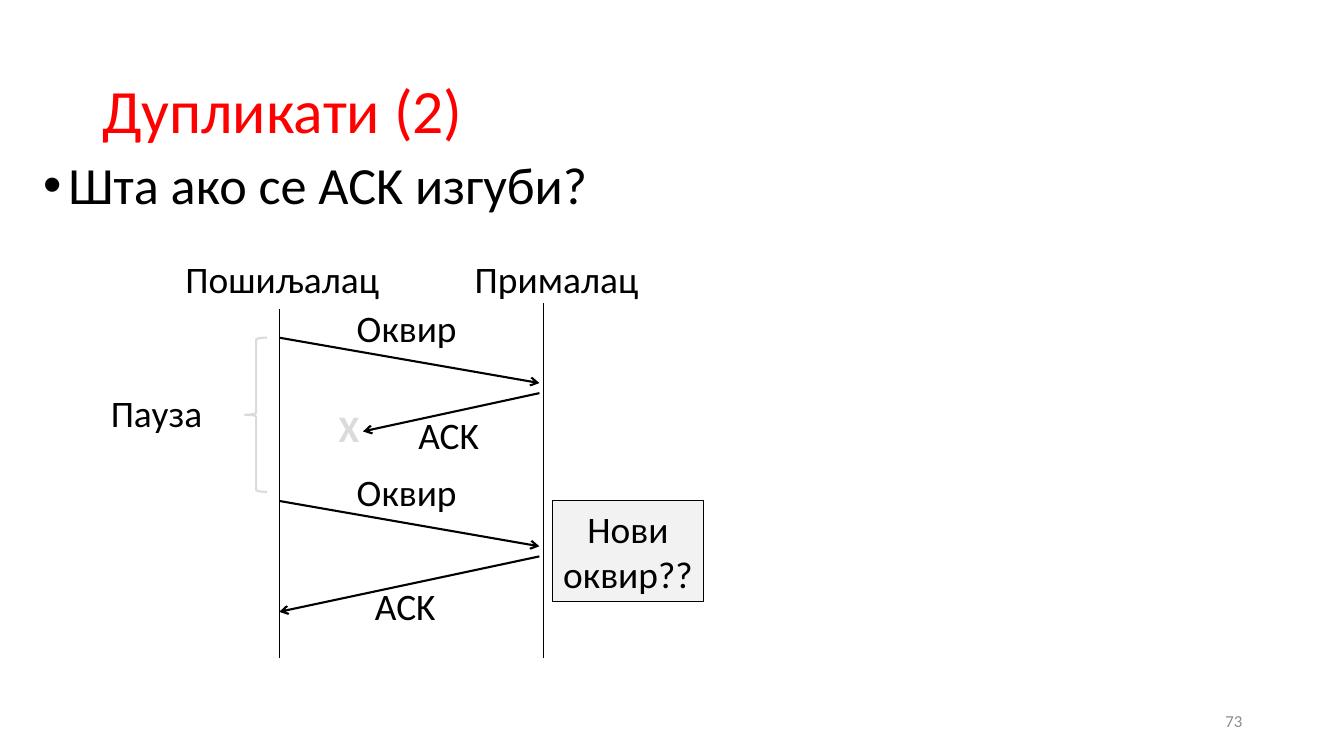
from pptx import Presentation
from pptx.dml.color import RGBColor
from pptx.enum.shapes import MSO_CONNECTOR as Connector, MSO_SHAPE as Preset
from pptx.enum.text import MSO_ANCHOR as Anchor, PP_ALIGN as Align
from pptx.oxml import parse_xml
from pptx.oxml.ns import nsdecls
from pptx.util import Pt

PX = 9144
BLACK, RED, PALE, GREY, LIGHT = "000000", "FF0000", "DBDBDB", "8C8C8C", "F2F2F2"
FONT = "Calibri"
LABEL_SIZE = 26.7


def px(*lengths):
    """Turn whole px into EMU."""
    return [length * PX for length in lengths]


def color(value):
    """Turn a hex string into a colour."""
    return RGBColor.from_string(value)


def write(shape, text, size, ink=BLACK, bold=False, align=Align.LEFT, anchor=Anchor.TOP, wrap=False):
    """Fill a shape with one styled paragraph and return the paragraph."""
    frame = shape.text_frame
    frame.text = text
    frame.word_wrap = wrap
    frame.vertical_anchor = anchor
    paragraph = frame.paragraphs[0]
    paragraph.alignment = align
    for run in paragraph.runs:
        run.font.name = FONT
        run.font.size = Pt(size)
        run.font.bold = bold
        run.font.color.rgb = color(ink)
    return paragraph


def add_text(slide, box, text, size, **style):
    """Add a text box and return its paragraph."""
    return write(slide.shapes.add_textbox(*px(*box)), text, size, **style)


def add_label(slide, left, top, width, text, **style):
    """Add a one-line diagram label."""
    add_text(slide, (left, top, width, 55), text, LABEL_SIZE, **style)


def add_line(slide, start, end, width, arrow=False):
    """Draw a black line, optionally with an open arrowhead at its end."""
    line = slide.shapes.add_connector(Connector.STRAIGHT, *px(*start, *end))
    line.line.color.rgb = color(BLACK)
    line.line.width = Pt(width)
    properties = line._element.spPr
    properties.append(parse_xml(f"<a:effectLst {nsdecls('a')}/>"))
    if arrow:
        line.line._get_or_add_ln().append(parse_xml(f'<a:tailEnd {nsdecls("a")} type="arrow"/>'))


def add_outline(slide, preset, box, ink, width, fill=None):
    """Add an outlined preset shape without shadow."""
    shape = slide.shapes.add_shape(preset, *px(*box))
    shape.shadow.inherit = False
    shape.line.color.rgb = color(ink)
    shape.line.width = Pt(width)
    if fill:
        shape.fill.solid()
        shape.fill.fore_color.rgb = color(fill)
    else:
        shape.fill.background()
    return shape


def add_heading(slide, box):
    """Place the title in its box."""
    title = add_text(slide, box, "Дупликати (2)", 44, ink=RED, anchor=Anchor.MIDDLE, wrap=True)
    title.line_spacing = 0.9


def add_question(slide, box):
    """Place the bulleted question in its box."""
    question = add_text(slide, box, "Шта ако се ACK изгуби?", 37.3, wrap=True)
    question.line_spacing = 0.9
    question.space_before = Pt(10)
    properties = question._p.get_or_add_pPr()
    properties.set("marL", str(25 * PX))
    properties.set("indent", str(-25 * PX))
    properties.append(parse_xml(f'<a:buFont {nsdecls("a")} typeface="Arial"/>'))
    properties.append(parse_xml(f'<a:buChar {nsdecls("a")} char="•"/>'))


def add_exchange(slide, left, top, ack_reach, ack_drop, ack_label):
    """Draw a frame going right and its ACK coming back."""
    right = left + 258
    add_line(slide, (left, top), (right, top + 45), 1.5, arrow=True)
    add_line(slide, (right, top + 55), (right - ack_reach, top + 55 + ack_drop), 1.5, arrow=True)
    add_label(slide, left + 67, top - 37, 120, "Оквир")
    label_left, label_top = ack_label
    add_label(slide, left + label_left, top + label_top, 81, "ACK")


def add_diagram(slide, box):
    """Draw the sender and receiver timelines with both exchanges."""
    left, top, width, height = box
    sender, receiver, bottom = left + 177, left + 439, top + height
    first, second = top + 86, top + 248
    add_label(slide, left + 74, top, 214, "Пошиљалац")
    add_label(slide, left + 361, top, 184, "Прималац")
    add_line(slide, (sender, top + 58), (sender, bottom), 1)
    add_line(slide, (receiver, top + 52), (receiver, bottom), 1)
    add_exchange(slide, sender, first, 175, 38, (128, 69))
    add_exchange(slide, sender, second, 258, 55, (85, 77))
    add_label(slide, sender + 49, first + 62, 41, "X", ink=PALE, bold=True)
    add_label(slide, left, first + 47, 112, "Пауза")
    add_outline(slide, Preset.LEFT_BRACE, (sender - 34, first, 22, 153), PALE, 1.5)
    note = add_outline(slide, Preset.RECTANGLE, (left + width - 150, second, 150, 100), BLACK, 0.75, LIGHT)
    write(note, "Нови\vоквир??", LABEL_SIZE, align=Align.CENTER)


def add_slide_number(slide, box):
    """Place the slide number in its box."""
    add_text(slide, box, "73", 12, ink=GREY, align=Align.RIGHT, anchor=Anchor.MIDDLE, wrap=True)


def main():
    """Build and save the presentation."""
    presentation = Presentation()
    presentation.slide_width, presentation.slide_height = px(1333, 750)
    slide = presentation.slides.add_slide(presentation.slide_layouts[6])
    add_slide_number(slide, (942, 695, 300, 40))
    add_heading(slide, (92, 40, 1150, 145))
    add_question(slide, (33, 153, 833, 522))
    add_diagram(slide, (100, 249, 598, 404))
    presentation.save("out.pptx")


if __name__ == "__main__":
    main()
